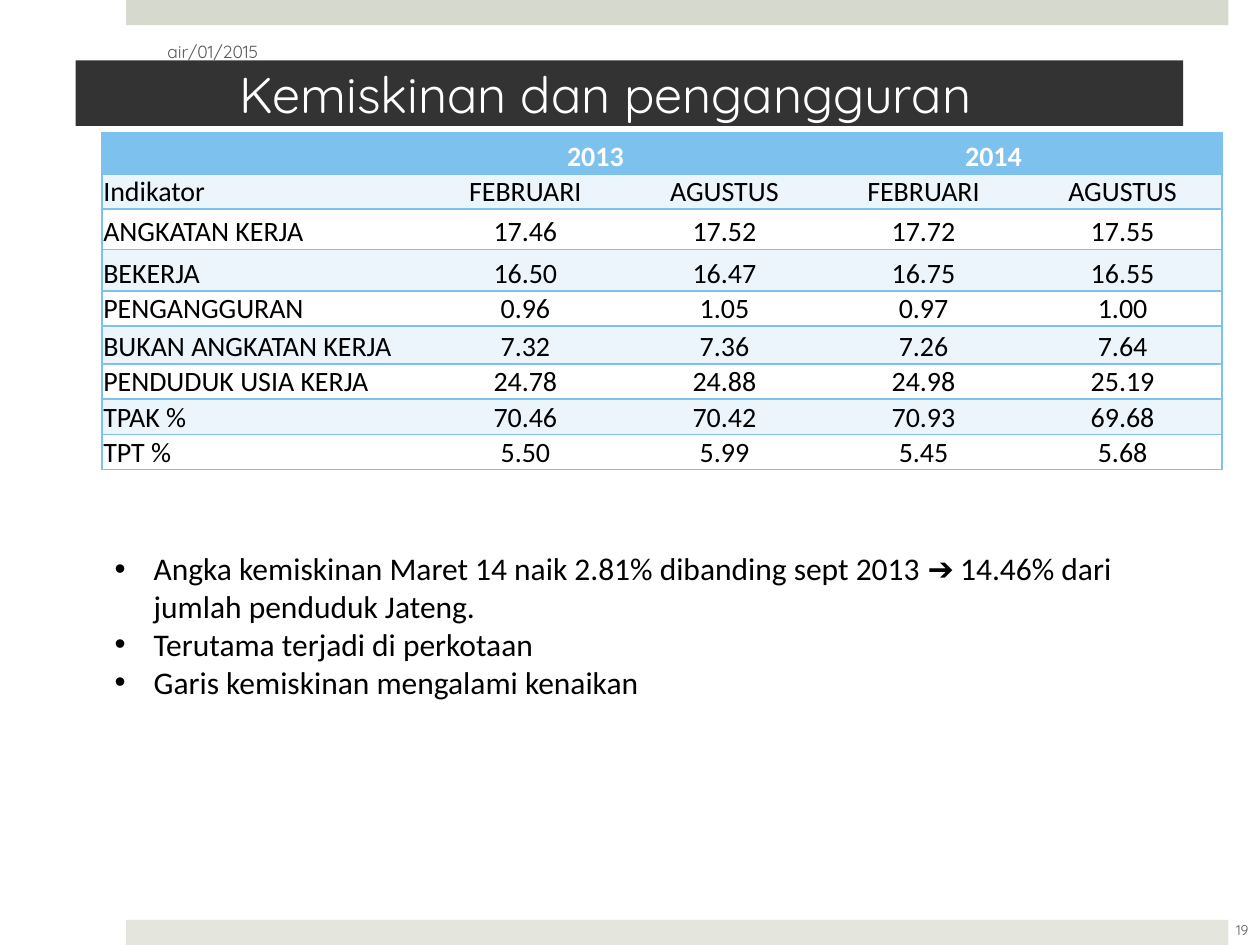
from dataclasses import dataclass
from lxml.etree import SubElement
from pptx import Presentation
from pptx.dml.color import RGBColor as RGB
from pptx.enum.shapes import MSO_SHAPE as Shape
from pptx.enum.text import MSO_ANCHOR as Anchor, MSO_AUTO_SIZE as AutoSize, PP_ALIGN as Align
from pptx.oxml.ns import qn
from pptx.util import Inches, Pt


@dataclass(frozen=True)
class Theme:
    heading: str = "Quicksand"
    body: str = "Calibri"
    white: str = "FFFFFF"
    black: str = "000000"
    dark: str = "333333"
    gray: str = "595959"
    top_strip: str = "D6D9CD"
    bottom_strip: str = "E4E6DE"
    blue: str = "7DC1EF"
    pale: str = "ECF4FC"
    title_size: float = 28.8
    list_size: float = 18
    table_size: float = 16
    date_size: float = 10
    number_size: float = 8


T = Theme()
WIDTH, HEIGHT = Inches(10), Inches(7.5)
NO_STYLE = "{2D5ABB26-0587-4C30-8999-92F81FD0307C}"
COLUMNS = [25.7] + [15.8] * 4
ROWS = [4.4, 3.73, 4.27, 4.4, 3.73, 4, 3.73, 3.73, 3.73]
DATA = [
    ["", "2013", "", "2014", ""],
    ["Indikator"] + ["FEBRUARI", "AGUSTUS"] * 2,
    ["ANGKATAN KERJA", "17.46", "17.52", "17.72", "17.55"],
    ["BEKERJA", "16.50", "16.47", "16.75", "16.55"],
    ["PENGANGGURAN", "0.96", "1.05", "0.97", "1.00"],
    ["BUKAN ANGKATAN KERJA", "7.32", "7.36", "7.26", "7.64"],
    ["PENDUDUK USIA KERJA", "24.78", "24.88", "24.98", "25.19"],
    ["TPAK %", "70.46", "70.42", "70.93", "69.68"],
    ["TPT %", "5.50", "5.99", "5.45", "5.68"],
]
POINTS = [
    "Angka kemiskinan Maret 14 naik 2.81% dibanding sept 2013 ➔ 14.46% dari jumlah penduduk Jateng.",
    "Terutama terjadi di perkotaan",
    "Garis kemiskinan mengalami kenaikan",
]


def across(share):
    return int(WIDTH * share / 100)


def down(share):
    return int(HEIGHT * share / 100)


def area(x, y, w, h):
    return across(x), down(y), across(w), down(h)


def place(sp, box):
    sp.left, sp.top, sp.width, sp.height = box


def paint(target, color):
    target.fill.solid()
    target.fill.fore_color.rgb = RGB.from_string(color)


def write(p, text, *, size, color, font=T.body, bold=False, align=Align.LEFT):
    p.alignment = align
    p.space_before = Pt(0)
    r = p.add_run()
    r.text = text
    r.font.name, r.font.size, r.font.bold = font, Pt(size), bold
    r.font.color.rgb = RGB.from_string(color)


def add_strip(s, box, color):
    sp = s.shapes.add_shape(Shape.RECTANGLE, *box)
    sp.shadow.inherit = False
    sp.line.fill.background()
    paint(sp, color)


def add_label(s, box, text, **style):
    tf = s.shapes.add_textbox(*box).text_frame
    tf.word_wrap = True
    tf.vertical_anchor = Anchor.MIDDLE
    write(tf.paragraphs[0], text, font=T.heading, color=T.gray, **style)


def fill_title(sp, box, text):
    place(sp, box)
    paint(sp, T.dark)
    tf = sp.text_frame
    tf.auto_size = AutoSize.NONE
    tf.vertical_anchor = Anchor.MIDDLE
    tf.margin_left, tf.margin_right = across(13), across(3)
    write(tf.paragraphs[0], text, font=T.heading, size=T.title_size, color=T.white)


def fill_list(sp, box, points):
    place(sp, box)
    tf = sp.text_frame
    tf.auto_size = AutoSize.NONE
    for i, point in enumerate(points):
        p = tf.add_paragraph() if i else tf.paragraphs[0]
        write(p, point, size=T.list_size, color=T.black)
        pPr = p._p.get_or_add_pPr()
        pPr.set("marL", str(across(3.1)))
        pPr.set("indent", str(-across(3.1)))
        SubElement(pPr, qn("a:buFont"), typeface="Arial")
        SubElement(pPr, qn("a:buChar"), char="•")


def add_borders(cell, sides):
    tcPr = cell._tc.get_or_add_tcPr()
    for side in sides:
        ln = SubElement(tcPr, qn(f"a:ln{side}"), w=str(Pt(1)))
        color = SubElement(SubElement(ln, qn("a:solidFill")), qn("a:srgbClr"))
        color.set("val", T.blue)


def fill_cell(cell, text, row, column):
    sides = {0: "LTB", len(COLUMNS) - 1: "RTB"}.get(column, "TB")
    add_borders(cell, sides)
    header = row == 0
    paint(cell, T.blue if header else T.pale if row % 2 else T.white)
    cell.vertical_anchor = Anchor.BOTTOM
    cell.margin_left = cell.margin_right = cell.margin_top = Inches(0.01)
    cell.margin_bottom = 0
    align = Align.RIGHT if header else Align.CENTER if column else Align.LEFT
    write(cell.text_frame.paragraphs[0], text, size=T.table_size, bold=header,
          color=T.white if header else T.black, align=align)


def add_data_table(s, x, y):
    box = area(x, y, sum(COLUMNS), sum(ROWS))
    table = s.shapes.add_table(len(ROWS), len(COLUMNS), *box).table
    table._tbl.tblPr.find(qn("a:tableStyleId")).text = NO_STYLE
    for column, share in zip(table.columns, COLUMNS):
        column.width = across(share)
    for row, share in zip(table.rows, ROWS):
        row.height = down(share)
    for i, values in enumerate(DATA):
        for j, text in enumerate(values):
            fill_cell(table.cell(i, j), text, i, j)


def main():
    prs = Presentation()
    prs.slide_width, prs.slide_height = WIDTH, HEIGHT
    s = prs.slides.add_slide(prs.slide_layouts[1])
    title, body = s.placeholders
    add_strip(s, area(10, 0, 87.5, 2.67), T.top_strip)
    add_strip(s, area(10, 97.33, 87.5, 2.67), T.bottom_strip)
    fill_title(title, area(6, 6.4, 87.9, 6.93), "Kemiskinan dan pengangguran")
    add_label(s, area(12.3, 2.8, 31.7, 5.33), "air/01/2015", size=T.date_size)
    add_label(s, area(96.1, 95.73, 5, 5.33), "19", size=T.number_size, align=Align.CENTER)
    add_data_table(s, 8.1, 14)
    fill_list(body, area(8.1, 57.47, 85.2, 17.47), POINTS)
    prs.save("out.pptx")


if __name__ == "__main__":
    main()
